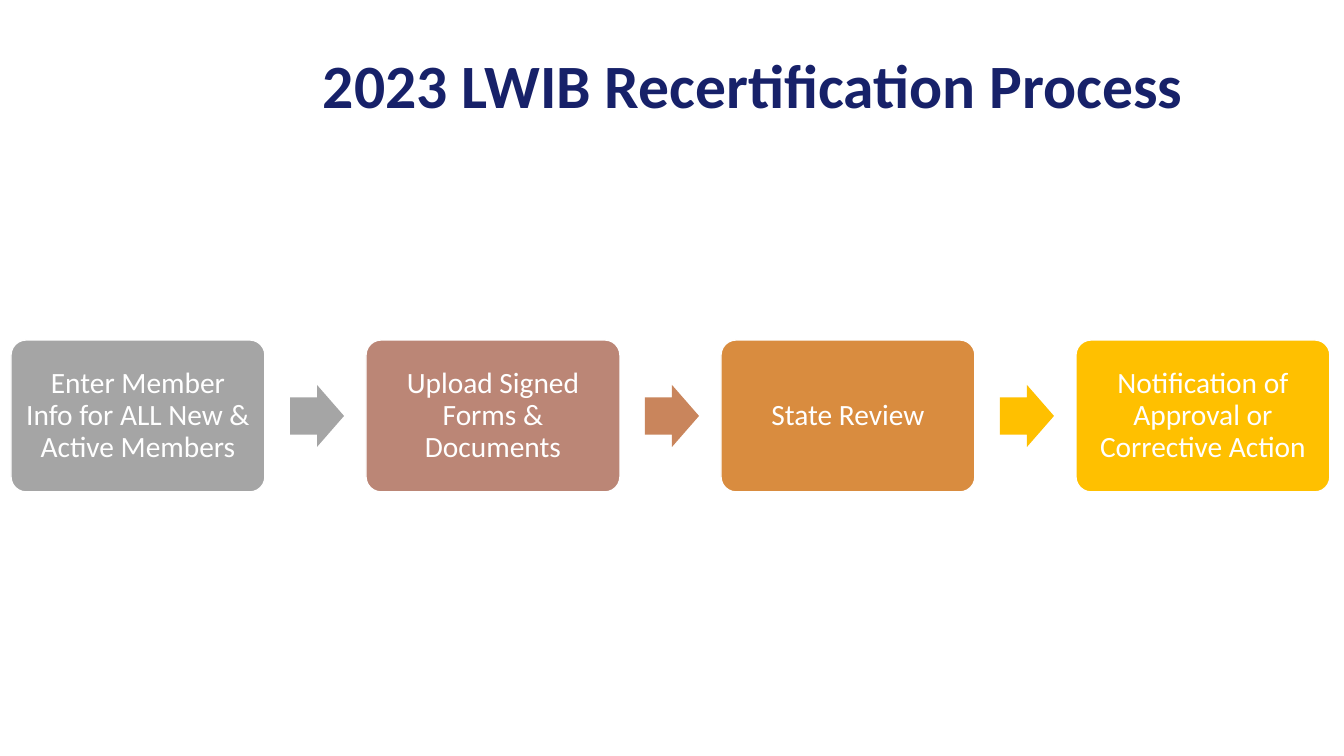
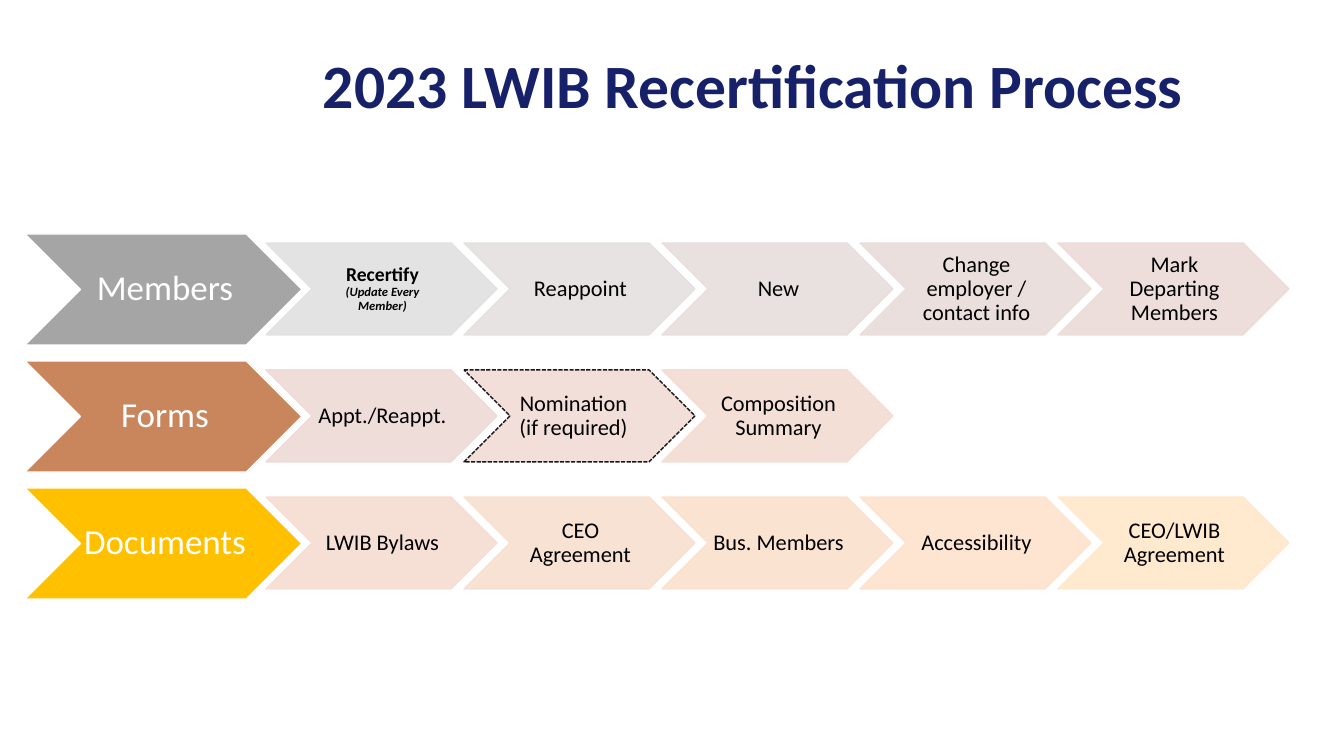
from lxml import etree
from pptx import Presentation
from pptx.dml.color import RGBColor
from pptx.enum.dml import MSO_LINE
from pptx.enum.shapes import MSO_SHAPE
from pptx.enum.text import MSO_ANCHOR, PP_ALIGN
from pptx.oxml.ns import qn
from pptx.util import Emu, Pt

ROUNDED = MSO_SHAPE.ROUNDED_RECTANGLE
ARROW = MSO_SHAPE.RIGHT_ARROW
CHEVRON = MSO_SHAPE.CHEVRON
SHORT_DASH = MSO_LINE.SQUARE_DOT
MIDDLE = MSO_ANCHOR.MIDDLE
LEFT, CENTER = PP_ALIGN.LEFT, PP_ALIGN.CENTER

EMU_PER_PX = 914400 / 100.8
SLIDE_WIDTH, SLIDE_HEIGHT = 1344, 756
TITLE = "2023 LWIB Recertification Process"

COLORS = {
    "navy": "172169",
    "white": "FFFFFF",
    "black": "000000",
    "gray": "A5A5A5",
    "rose": "BB8676",
    "copper": "C9855C",
    "orange": "D98C3F",
    "gold": "FFC000",
}

TITLE_FONT = {"name": "Calibri", "size": Pt(44), "bold": True}
STAGE_FONT = {"name": "Calibri", "size": Pt(21)}
HEADING_FONT = {"name": "Calibri", "size": Pt(25)}
STEP_FONT = {"name": "Calibri", "size": Pt(16)}
LEAD_FONT = {"name": "Calibri", "size": Pt(14), "bold": True}
NOTE_FONT = {"name": "Calibri", "size": Pt(9), "bold": True, "italic": True}

STAGES = [
    ("Enter Member Info for ALL New & Active Members", "gray", "gray"),
    ("Upload Signed Forms & Documents", "rose", "copper"),
    ("State Review", "orange", "gold"),
    ("Notification of Approval or Corrective Action", "gold", None),
]

RECERTIFY = [
    ("Recertify", LEAD_FONT, 0),
    ("(Update Every", NOTE_FONT, 0),
    ("Member)", NOTE_FONT, 0),
]
NOMINATION = [("Nomination", STEP_FONT, 14), ("(if required)", STEP_FONT, 0)]

ROWS = [
    ("Members", "gray", [
        (RECERTIFY, "E1E1E1"),
        ("Reappoint", "E4E0DF"),
        ("New", "E6DEDC"),
        ("Change employer / contact info", "E9DCDA"),
        ("Mark Departing Members", "ECDBD9"),
    ]),
    ("Forms", "copper", [
        ("Appt./Reappt.", "EEDAD7"),
        (NOMINATION, "F1DCD5"),
        ("Composition Summary", "F3DCD3"),
    ]),
    ("Documents", "gold", [
        ("LWIB Bylaws", "F6DDD1"),
        ("CEO Agreement", "F8DFD0"),
        ("Bus. Members", "FBE0CE"),
        ("Accessibility", "FDE3CD"),
        ("CEO/LWIB Agreement", "FFE8CB"),
    ]),
]


def px(value):
    return Emu(round(value * EMU_PER_PX))


def rgb(color):
    return RGBColor.from_string(COLORS.get(color, color))


def write(shape, lines, color, insets, alignment=CENTER):
    frame = shape.text_frame
    frame.word_wrap = True
    frame.vertical_anchor = MIDDLE
    for side, inset in zip(("left", "top", "right", "bottom"), insets):
        setattr(frame, f"margin_{side}", px(inset))
    for index, (text, font_format, right_indent) in enumerate(lines):
        paragraph = frame.add_paragraph() if index else frame.paragraphs[0]
        paragraph.alignment = alignment
        paragraph.line_spacing = 0.9
        if right_indent:
            paragraph._p.get_or_add_pPr().set("marR", str(px(right_indent)))
        run = paragraph.add_run()
        run.text = text
        for name, value in font_format.items():
            setattr(run.font, name, value)
        run.font.color.rgb = rgb(color)


def add_title(slide):
    box = slide.shapes.add_textbox(px(313), px(42), px(958), px(94))
    write(box, [(TITLE, TITLE_FONT, 0)], "navy", (10, 5, 10, 5), LEFT)


def add_block(slide, kind, bounds, fill, line=None, adjustments=()):
    shape = slide.shapes.add_shape(kind, *map(px, bounds))
    shape.shadow.inherit = False
    shape.fill.solid()
    shape.fill.fore_color.rgb = rgb(fill)
    if line:
        shape.line.color.rgb = rgb(line)
        shape.line.width = Pt(1)
    else:
        shape.line.fill.background()
    for index, value in enumerate(adjustments):
        shape.adjustments[index] = value
    return shape


def make_translucent(shape):
    for color in shape._element.spPr.iter(qn("a:srgbClr")):
        etree.SubElement(color, qn("a:alpha"), val="90000")


def add_step(slide, bounds, label, fill):
    shape = add_block(slide, CHEVRON, bounds, fill, fill)
    make_translucent(shape)
    if label is NOMINATION:
        shape.line.color.rgb = rgb("black")
        shape.line.dash_style = SHORT_DASH
    lines = [(label, STEP_FONT, 0)] if isinstance(label, str) else label
    write(shape, lines, "black", (2, 1, 0, 1))


def add_stage_flow(slide):
    for index, (label, fill, arrow_fill) in enumerate(STAGES):
        left = 11 + index * 355
        stage = add_block(slide, ROUNDED, (left, 340, 254, 152), fill, "white", (0.1,))
        write(stage, [(label, STAGE_FONT, 0)], "white", (9, 9, 9, 9))
        if arrow_fill:
            add_block(slide, ARROW, (left + 279, 385, 54, 62), arrow_fill,
                      adjustments=(0.6, 0.5))


def add_chevron_rows(slide):
    for row, (heading, fill, steps) in enumerate(ROWS):
        top = 234 + row * 127
        shape = add_block(slide, CHEVRON, (25, top, 277, 111), fill, "white")
        write(shape, [(heading, HEADING_FONT, 0)], "white", (3, 2, 0, 2))
        for column, (label, step_fill) in enumerate(steps):
            bounds = (266 + column * 198, top + 9, 231, 92)
            add_step(slide, bounds, label, step_fill)


def main():
    presentation = Presentation()
    presentation.slide_width = px(SLIDE_WIDTH)
    presentation.slide_height = px(SLIDE_HEIGHT)
    for add_content in (add_stage_flow, add_chevron_rows):
        slide = presentation.slides.add_slide(presentation.slide_layouts[6])
        add_title(slide)
        add_content(slide)
    presentation.save("out.pptx")


if __name__ == "__main__":
    main()
